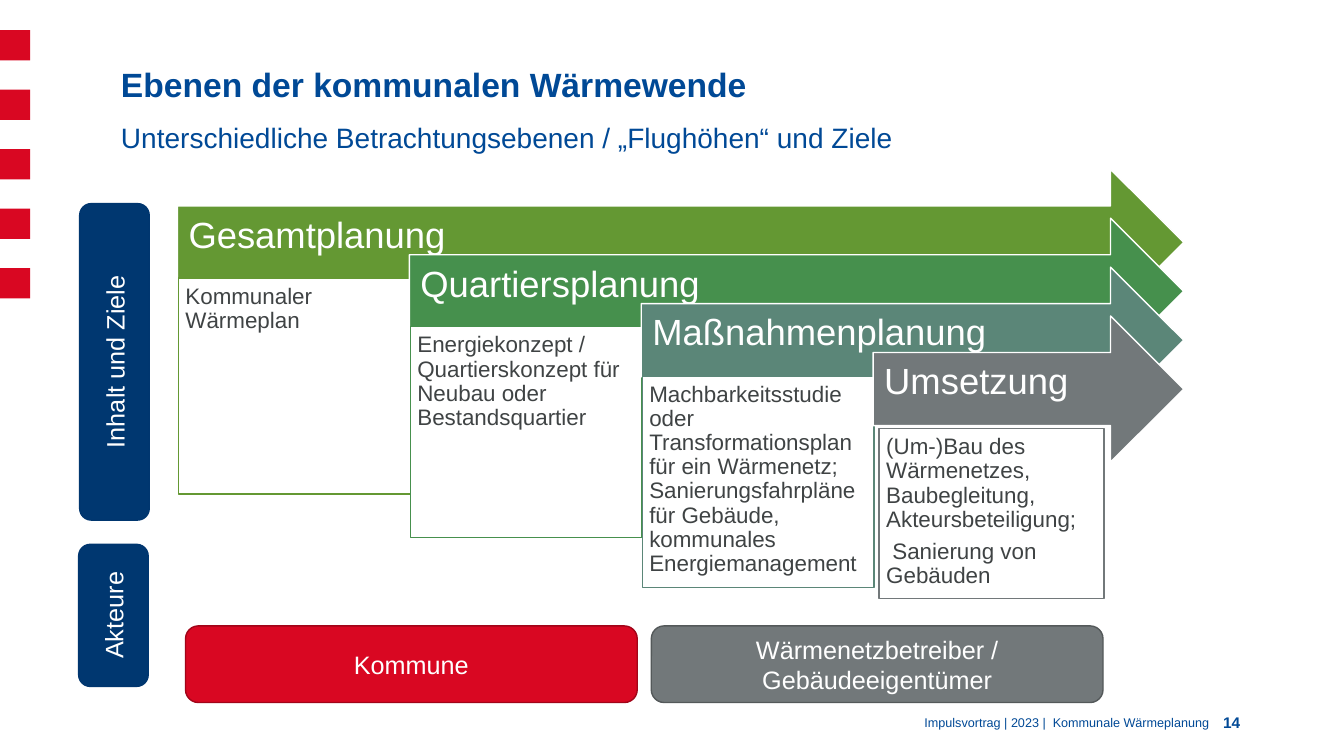
from pptx import Presentation
from pptx.dml.color import RGBColor
from pptx.enum.shapes import MSO_SHAPE as Shape
from pptx.enum.text import MSO_ANCHOR as Anchor, MSO_AUTO_SIZE as AutoSize, PP_ALIGN as Align
from pptx.oxml.ns import qn
from pptx.util import Inches, Pt

# Content
TITLE = "Ebenen der kommunalen Wärmewende"
SUBTITLE = "Unterschiedliche Betrachtungsebenen / „Flughöhen“ und Ziele"
FOOTER = "Impulsvortrag | 2023 |  Kommunale Wärmeplanung"
PAGE = "14"

COLORS = {
    "blue": "004996", "navy": "003770", "navy edge": "00366F",
    "red": "D90722", "red edge": "A10519",
    "green": "649833", "leaf": "46904D", "teal": "5B8678",
    "gray": "72787A", "gray edge": "54595A",
    "ink": "3F4344", "white": "FFFFFF",
}

# Level, colour, details, box (left, top, width, height)
LEVELS = [
    ("Gesamtplanung", "green", ["Kommunaler Wärmeplan"], (1.77, 2.76, 2.3, 2.14)),
    ("Quartiersplanung", "leaf",
     ["Energiekonzept / Quartierskonzept für Neubau oder Bestandsquartier"],
     (4.07, 3.24, 2.3, 2.09)),
    ("Maßnahmenplanung", "teal",
     ["Machbarkeitsstudie oder Transformationsplan für ein Wärmenetz; "
      "Sanierungsfahrpläne für Gebäude, kommunales Energiemanagement"],
     (6.37, 3.73, 2.3, 2.1)),
    ("Umsetzung", "gray",
     ["(Um-)Bau des Wärmenetzes, Baubegleitung, Akteursbeteiligung;",
      " Sanierung von Gebäuden"],
     (8.72, 4.25, 2.23, 1.69)),
]

# Label, colour, box, text direction
LABELS = [
    ("Kommune", "red", (1.84, 6.21, 4.48, 0.76), "horz"),
    ("Wärmenetzbetreiber / Gebäudeeigentümer", "gray", (6.46, 6.21, 4.48, 0.76), "horz"),
    ("Inhalt und Ziele", "navy", (0.79, 2.02, 0.69, 3.14), "vert270"),
    ("Akteure", "navy", (0.78, 5.4, 0.69, 1.41), "vert270"),
]

ARROW_LEFT, ARROW_TOP, ARROW_TIP, ARROW_HEIGHT = 1.76, 1.68, 11.74, 1.45
STEP_X, STEP_Y = 2.3, 0.485
STRIPES, STRIPE_SIZE, STRIPE_STEP = 5, 0.3, 0.59


def rgb(color):
    return RGBColor.from_string(COLORS[color])


def write(holder, paragraphs, size, color, align=Align.LEFT, anchor=Anchor.TOP,
          insets=(0.1, 0.05, 0.1, 0.05), bold=False, spacing=1.0, after=0):
    frame = holder.text_frame
    left, top, right, bottom = map(Inches, insets)
    frame_format = {
        "word_wrap": True, "auto_size": AutoSize.NONE, "vertical_anchor": anchor,
        "margin_left": left, "margin_top": top,
        "margin_right": right, "margin_bottom": bottom,
    }
    paragraph_format = {"alignment": align, "line_spacing": spacing,
                        "space_before": Pt(0), "space_after": Pt(after)}
    font_format = {"name": "Arial", "size": Pt(size), "bold": bold}
    for key, value in frame_format.items():
        setattr(frame, key, value)
    for index, words in enumerate(paragraphs):
        paragraph = frame.add_paragraph() if index else frame.paragraphs[0]
        for key, value in paragraph_format.items():
            setattr(paragraph, key, value)
        run = paragraph.add_run()
        run.text = words
        for key, value in font_format.items():
            setattr(run.font, key, value)
        run.font.color.rgb = rgb(color)


def draw(kind, box, fill, edge=None):
    shape = slide.shapes.add_shape(kind, *map(Inches, box))
    shape.shadow.inherit = False
    shape.fill.solid()
    shape.fill.fore_color.rgb = rgb(fill)
    if edge:
        shape.line.color.rgb = rgb(edge)
        shape.line.width = Pt(1)
    else:
        shape.line.fill.background()
    return shape


deck = Presentation()
deck.slide_width, deck.slide_height = Inches(13.33), Inches(7.5)
slide = deck.slides.add_slide(deck.slide_layouts[1])

# Red stripes on the left edge
for index in range(STRIPES):
    draw(Shape.RECTANGLE,
         (0, 0.3 + index * STRIPE_STEP, STRIPE_SIZE, STRIPE_SIZE), "red")

# Title and subtitle
title, subtitle = slide.shapes.title, slide.placeholders[1]
for heading, words, top, size, bold in ((title, TITLE, 0.63, 24, True),
                                        (subtitle, SUBTITLE, 1.18, 20, False)):
    heading.left, heading.top = Inches(1.1), Inches(top)
    heading.width, heading.height = Inches(9.11), Inches(0.6)
    write(heading, [words], size, "blue", bold=bold, spacing=0.9)
bullet_format = subtitle.text_frame.paragraphs[0]._p.get_or_add_pPr()
bullet_format.set("marL", "0")
bullet_format.set("indent", "0")
bullet_format.append(bullet_format.makeelement(qn("a:buNone"), {}))

# Footer and page number
for words, box, size, bold in ((FOOTER, (1.58, 6.97, 10.51, 0.4), 9, False),
                               (PAGE, (11.81, 6.97, 0.59, 0.39), 11, True)):
    note = slide.shapes.add_textbox(*map(Inches, box))
    write(note, [words], size, "blue", Align.RIGHT, Anchor.MIDDLE, bold=bold)

# Stepped arrows with their detail boxes
for index, (level, color, details, box) in enumerate(LEVELS):
    left = ARROW_LEFT + index * STEP_X
    arrow = draw(Shape.RIGHT_ARROW,
                 (left, ARROW_TOP + index * STEP_Y, ARROW_TIP - left, ARROW_HEIGHT),
                 color, "white")
    write(arrow, [level], 26, "white", anchor=Anchor.MIDDLE,
          insets=(0.11, 0.11, 0.28, 0.23), spacing=0.9)
    detail_box = draw(Shape.RECTANGLE, box, "white", color)
    write(detail_box, details, 16, "ink", insets=(0.07,) * 4, spacing=0.9, after=5.6)

# Actors and row labels
for words, color, box, direction in LABELS:
    label = draw(Shape.ROUNDED_RECTANGLE, box, color, color + " edge")
    write(label, [words], 18, "white", Align.CENTER, Anchor.MIDDLE)
    label.text_frame._txBody.bodyPr.set("vert", direction)

deck.save("out.pptx")
